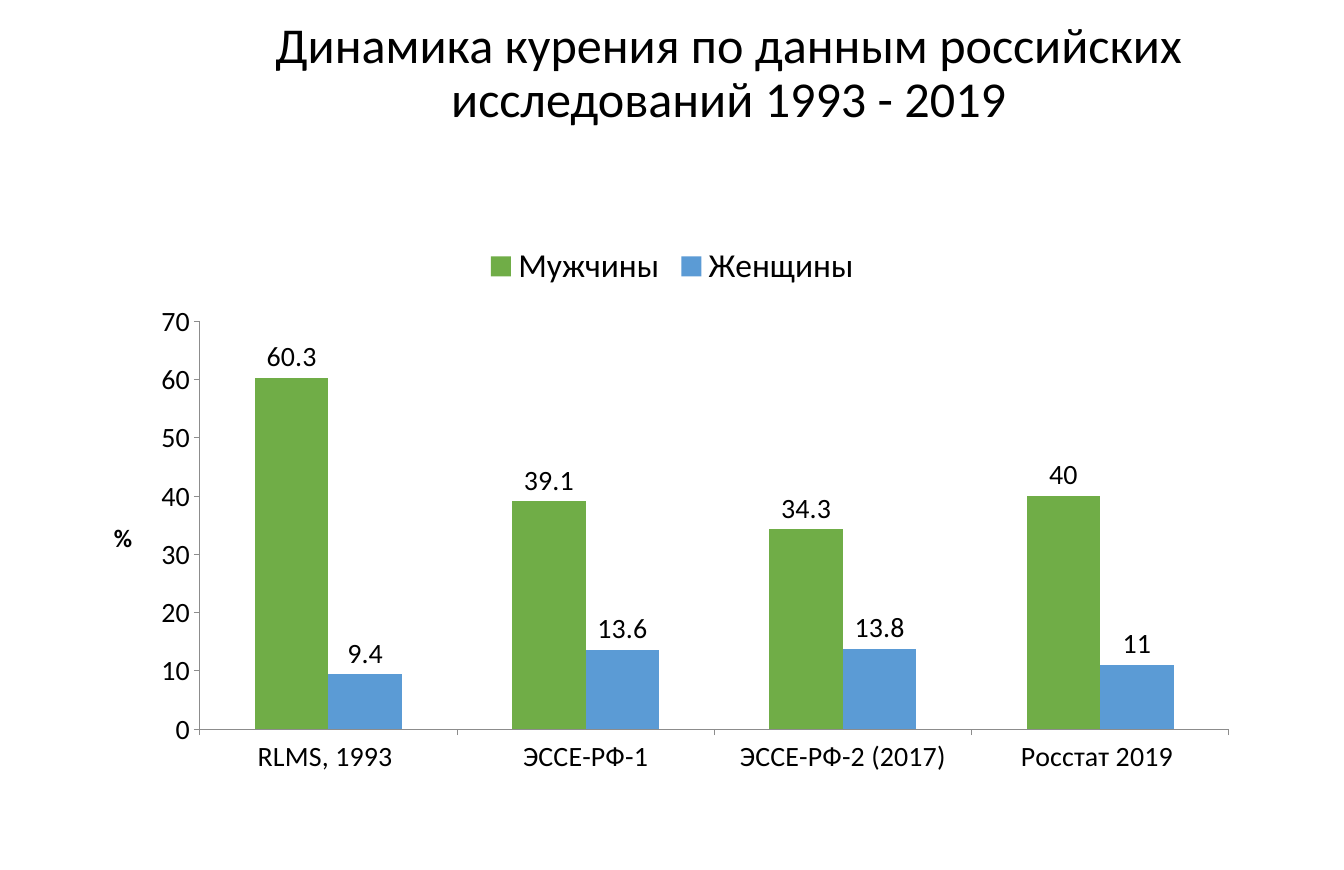
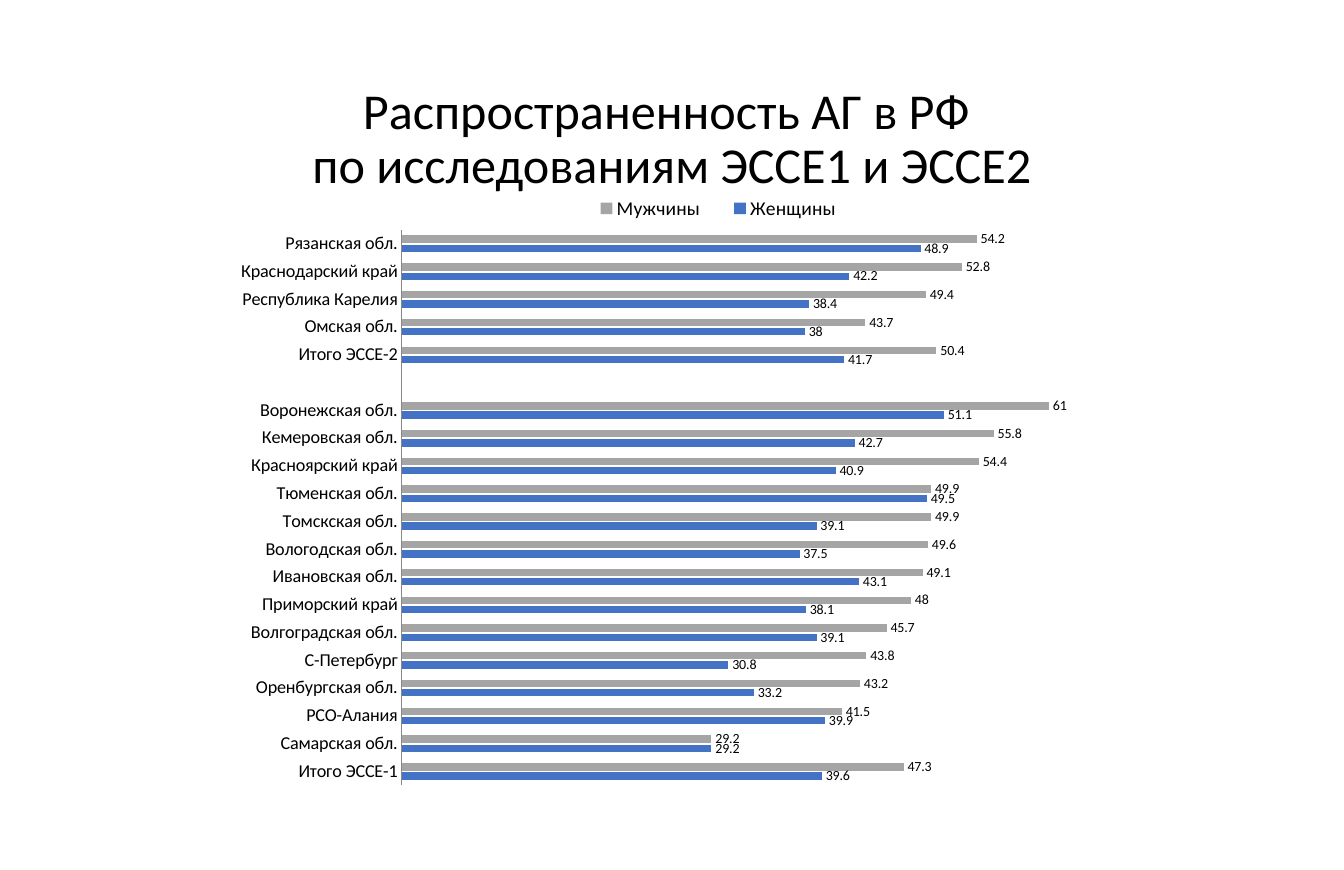
"""Build two chart slides on smoking and hypertension surveys in Russia."""
import pptx
import pptx.chart.data
import pptx.dml.color
import pptx.enum.chart
import pptx.enum.text
import pptx.oxml
import pptx.oxml.ns
import pptx.util

Inches, Pt = pptx.util.Inches, pptx.util.Pt
CHART = pptx.enum.chart
FONT, TEXT = "Calibri", "000000"
MEN, WOMEN = "Мужчины", "Женщины"

SMOKING = [
    ("RLMS, 1993 ", 60.3, 9.4),
    ("ЭССЕ-РФ-1", 39.1, 13.6),
    ("ЭССЕ-РФ-2 (2017)", 34.3, 13.8),
    ("Росстат 2019 ", 40, 11),
]
HYPERTENSION = [
    ("Итого ЭССЕ-1", 39.6, 47.3),
    ("Самарская обл.", 29.2, 29.2),
    ("РСО-Алания", 39.9, 41.5),
    ("Оренбургская обл.", 33.2, 43.2),
    ("С-Петербург", 30.8, 43.8),
    ("Волгоградская обл.", 39.1, 45.7),
    ("Приморский край", 38.1, 48),
    ("Ивановская обл.", 43.1, 49.1),
    ("Вологодская обл.", 37.5, 49.6),
    ("Томскская обл.", 39.1, 49.9),
    ("Тюменская обл.", 49.5, 49.9),
    ("Красноярский край", 40.9, 54.4),
    ("Кемеровская обл.", 42.7, 55.8),
    ("Воронежская обл.", 51.1, 61),
    (" ", None, None),
    ("Итого ЭССЕ-2", 41.7, 50.4),
    ("Омская обл.", 38, 43.7),
    ("Республика Карелия", 38.4, 49.4),
    ("Краснодарский край", 42.2, 52.8),
    ("Рязанская обл.", 48.9, 54.2),
]
SLIDES = [
    dict(
        title=["Динамика курения по данным российских исследований 1993 - 2019"],
        title_box=(1.49, 0.16, 11.54, 1.16),
        chart_box=(0.92, 2.31, 11.55, 5.5),
        kind=CHART.XL_CHART_TYPE.COLUMN_CLUSTERED,
        rows=SMOKING,
        series=[(MEN, "70AD47"), (WOMEN, "5B9BD5")],
        overlap=0,
        plot=(1.07, 0.89, 10.25, 4.06),
        legend=CHART.XL_LEGEND_POSITION.TOP,
        legend_box=None,
        sizes=dict(axis=20, legend=24, label=20),
        axis_line=("8C8C8C", 0.5),
        tick=CHART.XL_TICK_MARK.OUTSIDE,
        value_title="%",
    ),
    dict(
        title=["Распространенность АГ в РФ ", "по исследованиям ЭССЕ1 и ЭССЕ2"],
        title_box=(0.37, 0.77, 12.65, 1.25),
        chart_box=(1.53, 1.8, 10.02, 6.17),
        kind=CHART.XL_CHART_TYPE.BAR_CLUSTERED,
        rows=HYPERTENSION,
        series=[(WOMEN, "4472C4"), (MEN, "A5A5A5")],
        overlap=-25,
        plot=(2.47, 0.49, 7.4, 5.53),
        legend=CHART.XL_LEGEND_POSITION.RIGHT,
        legend_box=(4.18, 0.12, 2.89, 0.31),
        sizes=dict(axis=13, legend=14, label=10),
        axis_line=("888888", 0.75),
        tick=CHART.XL_TICK_MARK.NONE,
        value_title=None,
    ),
]


def rgb(value):
    return pptx.dml.color.RGBColor.from_string(value)


def style_font(font, size, bold=False):
    font.name, font.size, font.bold = FONT, Pt(size), bold
    font.color.rgb = rgb(TEXT)


def place(element, index, box, chart_box, inner=False):
    """Place a chart part, given in inches from the corner of its chart."""
    for old in element.findall(pptx.oxml.ns.qn("c:layout")):
        element.remove(old)
    target = '<c:layoutTarget val="inner"/>' if inner else ""
    modes = '<c:xMode val="edge"/><c:yMode val="edge"/>'
    values = "".join(f'<c:{tag} val="{part / whole:.4f}"/>'
                     for tag, part, whole in zip("xywh", box, chart_box[2:] * 2))
    element.insert(index, pptx.oxml.parse_xml(
        f'<c:layout {pptx.oxml.ns.nsdecls("c")}><c:manualLayout>'
        f'{target}{modes}{values}</c:manualLayout></c:layout>'))


def add_title(slide, lines, box):
    title = slide.shapes.title
    title.left, title.top, title.width, title.height = map(Inches, box)
    tf = title.text_frame
    tf.word_wrap = True
    tf.auto_size = pptx.enum.text.MSO_AUTO_SIZE.NONE
    tf.vertical_anchor = pptx.enum.text.MSO_ANCHOR.MIDDLE
    p = tf.paragraphs[0]
    p.alignment = pptx.enum.text.PP_ALIGN.CENTER
    p.line_spacing = 0.9
    for i, line in enumerate(lines):
        if i:
            p.add_line_break()
        r = p.add_run()
        r.text = line
        style_font(r.font, 36)


def style_axis(axis, cfg):
    color, width = cfg["axis_line"]
    axis.major_tick_mark = cfg["tick"]
    axis.minor_tick_mark = CHART.XL_TICK_MARK.NONE
    axis.format.line.color.rgb = rgb(color)
    axis.format.line.width = Pt(width)
    style_font(axis.tick_labels.font, cfg["sizes"]["axis"])


def add_value_title(axis, text, chart_box):
    tf = axis.axis_title.text_frame
    r = tf.paragraphs[0].add_run()
    r.text = text
    style_font(r.font, 18, bold=True)
    tf._txBody.bodyPr.set("rot", "0")
    place(axis.axis_title._element, 1, (0.17, 2.83), chart_box)


def add_chart(slide, cfg):
    names, *columns = zip(*cfg["rows"])
    data = pptx.chart.data.CategoryChartData(number_format="General")
    data.categories = names
    for (name, _), values in zip(cfg["series"], columns):
        data.add_series(name, values)
    box, sizes = cfg["chart_box"], cfg["sizes"]
    chart = slide.shapes.add_chart(cfg["kind"], *map(Inches, box), data).chart
    style_font(chart.font, sizes["label"])
    chart.has_title = False
    chart.has_legend = True
    chart.legend.position = cfg["legend"]
    chart.legend.include_in_layout = False
    style_font(chart.legend.font, sizes["legend"])
    if cfg["legend_box"]:
        place(chart.legend._element, 1, cfg["legend_box"], box)
    place(chart._chartSpace.chart.plotArea, 0, cfg["plot"], box, inner=True)

    plot = chart.plots[0]
    plot.vary_by_categories = False
    plot.gap_width, plot.overlap = 150, cfg["overlap"]
    for s, (_, color) in zip(plot.series, cfg["series"]):
        s.format.fill.solid()
        s.format.fill.fore_color.rgb = rgb(color)
        s.invert_if_negative = False
        labels = s.data_labels
        labels.show_value = True
        labels.position = CHART.XL_LABEL_POSITION.OUTSIDE_END
        style_font(labels.font, sizes["label"])

    style_axis(chart.category_axis, cfg)
    axis = chart.value_axis
    axis.has_major_gridlines = False
    axis.minimum_scale, axis.maximum_scale, axis.major_unit = 0, 70, 10
    if cfg["value_title"]:
        style_axis(axis, cfg)
        add_value_title(axis, cfg["value_title"], box)
    else:
        axis.visible = False


def main():
    prs = pptx.Presentation()
    prs.slide_width = pptx.util.Cm(34)
    prs.slide_height = pptx.util.Cm(22)
    for cfg in SLIDES:
        slide = prs.slides.add_slide(prs.slide_layouts[5])
        add_title(slide, cfg["title"], cfg["title_box"])
        add_chart(slide, cfg)
    prs.save("out.pptx")


if __name__ == "__main__":
    main()
